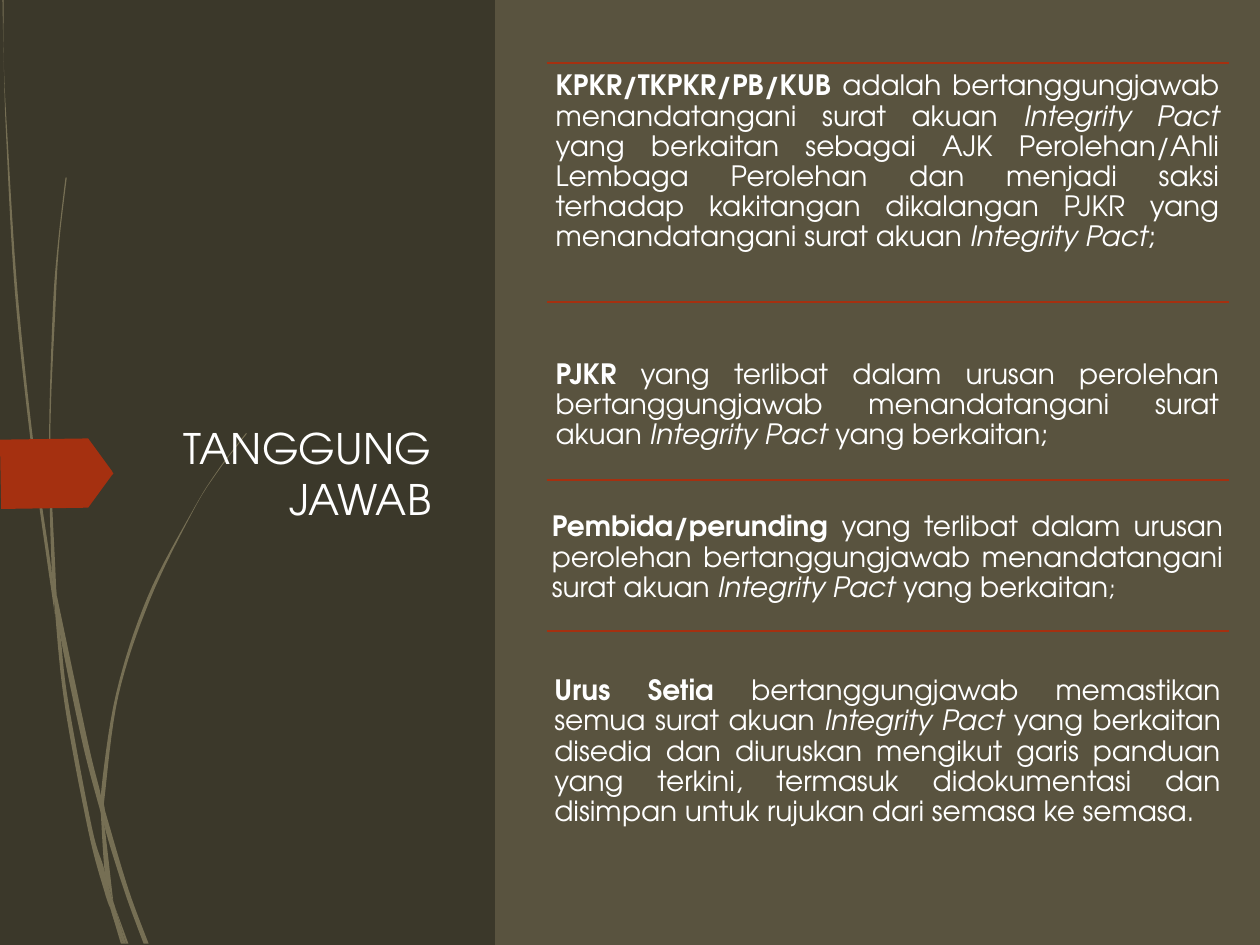
from collections import namedtuple

from lxml.etree import SubElement
from pptx import Presentation
from pptx.dml.color import RGBColor
from pptx.enum.shapes import MSO_CONNECTOR, MSO_SHAPE
from pptx.enum.text import MSO_ANCHOR, PP_ALIGN
from pptx.oxml.ns import qn
from pptx.util import Inches, Pt

OLIVE = RGBColor(0x76, 0x6F, 0x54)
DARK = RGBColor(0x3B, 0x38, 0x2A)
PANEL = RGBColor(0x59, 0x53, 0x3F)
RUST = RGBColor(0xA5, 0x30, 0x10)
WHITE = RGBColor(0xFF, 0xFF, 0xFF)
FONT = "TeX Gyre Adventor"

# The page grid has 10 columns and 7.5 rows, each one inch
COLUMNS, ROWS, SPLIT = 10, 7.5, 3.93
Box = namedtuple("Box", "left top width height")

# Each blade of grass: its left edge and its right edge, from top to bottom
BLADES = [
    ([(.02, 0), (.03, .48), (.05, 1.1), (.12, 2.33), (.25, 3.55), (.42, 4.77), (.43, 4.81)],
     [(.03, 0), (.03, .48), (.06, 1.09), (.14, 2.32), (.27, 3.55), (.41, 4.53), (.43, 4.81)]),
    ([(.45, 4.72), (.48, 5.05), (.66, 5.92), (.8, 6.45)],
     [(.45, 4.72), (.7, 5.9), (.8, 6.31), (.8, 6.45)]),
    ([(.83, 6.41), (.83, 6.56), (.99, 7.08), (1.14, 7.49)],
     [(.83, 6.41), (.85, 6.49), (1.02, 7.06), (1.18, 7.49)]),
    ([(.43, 4.77), (.51, 5.57), (.7, 6.59), (.83, 7.08), (.88, 7.22)],
     [(.43, 4.77), (.48, 5.05), (.54, 5.56), (.73, 6.57), (.83, 6.91), (.88, 7.22)]),
    ([(.52, 1.41), (.46, 1.93), (.42, 2.45), (.39, 3.49), (.41, 4.49), (.45, 4.72)],
     [(.53, 1.41), (.47, 1.93), (.44, 2.45), (.4, 3.49), (.44, 4.53), (.45, 4.72)]),
    ([(.91, 7.19), (1, 7.49)], [(.91, 7.19), (1.02, 7.49)]),
    ([(.41, 4.49), (.43, 4.77), (.48, 5.05)], [(.41, 4.49), (.45, 4.72), (.48, 5.05)]),
    ([(1.95, 3.44), (1.73, 3.73), (1.53, 4.05), (1.17, 4.74), (.92, 5.51), (.8, 6.31), (.83, 6.41)],
     [(1.96, 3.44), (1.73, 3.74), (1.53, 4.06), (1.19, 4.76), (.94, 5.52), (.83, 6.33), (.83, 6.41)]),
    ([(.88, 7.22), (.96, 7.49)], [(.88, 7.22), (.98, 7.49)]),
    ([(.8, 6.45), (.83, 6.91), (.87, 7.06), (.91, 7.19)],
     [(.8, 6.45), (.83, 6.56), (.9, 7.16), (.91, 7.19)]),
    ([(.8, 6.31), (.8, 6.45), (.83, 6.56)], [(.8, 6.31), (.83, 6.41), (.83, 6.56)]),
    ([(.83, 6.91), (.88, 7.22), (.98, 7.49)],
     [(.83, 6.91), (.87, 7.06), (.91, 7.19), (1, 7.49)]),
]

TAG = [(0, .01), (.7, 0), (.89, .26), (.9, .28), (.89, .29), (.7, .55), (.01, .56)]

PLAIN, BOLD, ITALIC = {}, {"bold": True}, {"italic": True}
PACT = ("Integrity Pact ", ITALIC)

# Each duty: rule row, text row, text height, side inset, top inset, spans
DUTIES = [
    (.5, .5, 1.9, .07, .07, [
        ("KPKR/TKPKR/PB/KUB ", BOLD),
        ("adalah bertanggungjawab menandatangani surat akuan ", PLAIN), PACT,
        ("yang berkaitan sebagai AJK Perolehan/Ahli Lembaga Perolehan dan menjadi saksi "
         "terhadap kakitangan dikalangan PJKR yang menandatangani surat akuan ", PLAIN),
        ("Integrity Pact", ITALIC), (";", PLAIN)]),
    (2.4, 2.79, 1.41, .07, .07, [
        ("PJKR", BOLD),
        (" yang terlibat dalam urusan perolehan bertanggungjawab menandatangani "
         "surat akuan ", PLAIN), PACT, ("yang berkaitan;", PLAIN)]),
    (3.81, 3.81, 1.2, .04, .26, [
        ("Pembida/perunding ", BOLD),
        ("yang terlibat dalam urusan perolehan bertanggungjawab menandatangani "
         "surat akuan ", PLAIN), PACT, ("yang berkaitan", PLAIN), (";", {"size": Pt(14)})]),
    (5.01, 5.01, 2.18, .06, .36, [
        ("Urus Setia ", BOLD),
        ("bertanggungjawab memastikan semua surat akuan ", PLAIN), PACT,
        ("yang berkaitan disedia dan diuruskan mengikut garis panduan yang terkini, termasuk "
         "didokumentasi dan disimpan untuk rujukan dari semasa ke semasa.", PLAIN)]),
]


def apply(target, values):
    for name, value in values.items():
        setattr(target, name, value)


def paint(shape, color):
    shape.shadow.inherit = False
    shape.fill.solid()
    shape.fill.fore_color.rgb = color
    shape.line.fill.background()


def add_panel(page, box, color):
    paint(page.shapes.add_shape(MSO_SHAPE.RECTANGLE, *map(Inches, box)), color)


def add_outline(page, box, points, color):
    spots = [(Inches(box.left + x), Inches(box.top + y)) for x, y in points]
    builder = page.shapes.build_freeform(*spots[0])
    builder.add_line_segments(spots[1:], close=True)
    paint(builder.convert_to_shape(), color)


def smooth_edge(points, steps=8):
    """Run a Catmull-Rom curve through the points."""
    padded = [points[0], *points, points[-1]]
    curve = []
    for a, b, c, d in zip(padded, padded[1:], padded[2:], padded[3:]):
        for step in range(steps):
            t = step / steps
            curve.append(tuple(
                q + t * (r - p) / 2 + t * t * (p - 2.5 * q + 2 * r - s / 2)
                + t ** 3 * (1.5 * (q - r) + (s - p) / 2)
                for p, q, r, s in zip(a, b, c, d)))
    return curve + [points[-1]]


def add_text(page, box, spans, size, frame_format, para_format):
    frame = page.shapes.add_textbox(*map(Inches, box)).text_frame
    apply(frame, {"word_wrap": True, **frame_format})
    para = frame.paragraphs[0]
    apply(para, para_format)
    for text, style in spans:
        span = para.add_run()
        span.text = text
        apply(span.font, {"name": FONT, "size": Pt(size), **style})
        span.font.color.rgb = WHITE


def add_rule(page, left, row, width):
    rule = page.shapes.add_connector(
        MSO_CONNECTOR.STRAIGHT, *map(Inches, (left, row, left + width, row)))
    rule.line.color.rgb = RUST
    rule.line.width = Pt(1.25)
    SubElement(rule._element.spPr, qn("a:effectLst"))


def add_title_side(page, box):
    add_panel(page, box, DARK)
    for left_edge, right_edge in BLADES:
        outline = smooth_edge(left_edge) + smooth_edge(right_edge)[::-1]
        add_outline(page, box, outline, OLIVE)
    title = Box(box.left + 1, box.top + 1.2, 2.52, 5.11)
    add_text(page, title, [("TANGGUNG JAWAB", PLAIN)], 24,
             {"vertical_anchor": MSO_ANCHOR.MIDDLE}, {"alignment": PP_ALIGN.RIGHT})
    add_outline(page, Box(box.left, box.top + 3.48, .9, .56), TAG, RUST)


def add_duties_side(page, box):
    add_panel(page, box, PANEL)
    left, width = box.left + .41, box.width - .66
    for rule_row, text_row, height, side, head, spans in DUTIES:
        add_rule(page, left, box.top + rule_row, width)
        margins = {"margin_left": Inches(side), "margin_right": Inches(side),
                   "margin_top": Inches(head), "margin_bottom": Inches(side)}
        add_text(page, Box(left, box.top + text_row, width, height), spans, 16, margins,
                 {"alignment": PP_ALIGN.JUSTIFY, "line_spacing": .9})


def main():
    deck = Presentation()
    apply(deck, {"slide_width": Inches(COLUMNS), "slide_height": Inches(ROWS)})
    page = deck.slides.add_slide(deck.slide_layouts[6])
    page.background.fill.solid()
    page.background.fill.fore_color.rgb = OLIVE
    add_title_side(page, Box(0, 0, SPLIT, ROWS))
    add_duties_side(page, Box(SPLIT, 0, COLUMNS - SPLIT, ROWS))
    deck.save("out.pptx")


if __name__ == "__main__":
    main()
